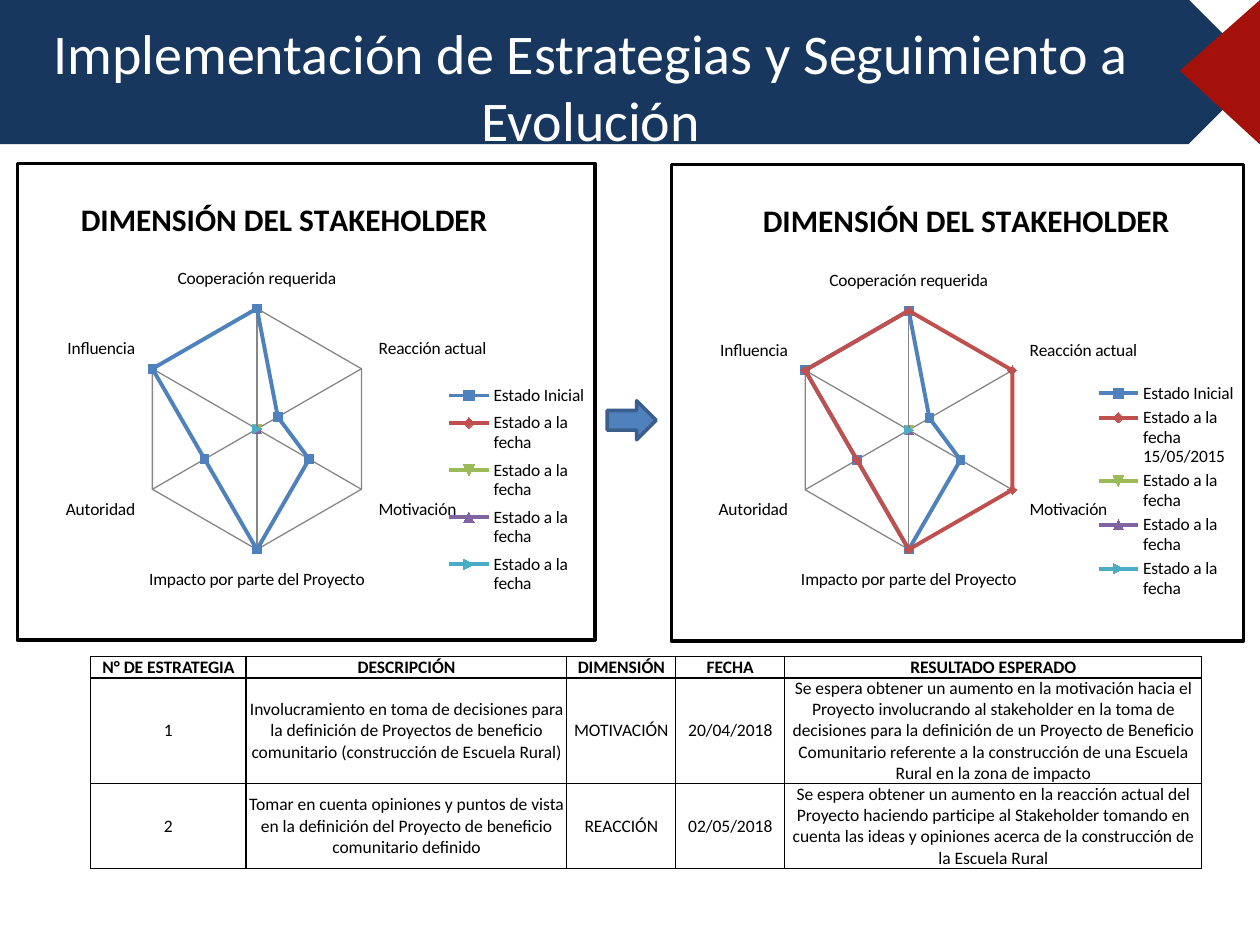
from dataclasses import dataclass

from lxml.etree import SubElement
from pptx import Presentation
from pptx.chart.data import CategoryChartData
from pptx.dml.color import RGBColor
from pptx.enum.chart import XL_CHART_TYPE, XL_LEGEND_POSITION, XL_TICK_LABEL_POSITION, XL_TICK_MARK
from pptx.enum.shapes import MSO_SHAPE
from pptx.enum.text import MSO_ANCHOR, PP_ALIGN
from pptx.oxml import parse_xml
from pptx.oxml.ns import nsdecls, qn
from pptx.util import Pt


@dataclass(frozen=True)
class Theme:
    font: str = "Calibri"
    title: int = 32
    chart_title: int = 18
    body: int = 10
    black: str = "000000"
    white: str = "FFFFFF"
    navy: str = "17375E"
    red: str = "A4100A"
    blue: str = "4F81BD"
    arrow_edge: str = "3A5F8C"
    grid: str = "868686"
    series: tuple = ("4F81BD", "C0504D", "9BBB59", "8064A2", "4BACC6")


def rgb(value):
    return RGBColor.from_string(value)


def set_layout(parent, inner=False, **fractions):
    """Place a chart part by fractions of the chart's size."""
    for old in parent.findall(qn("c:layout")):
        parent.remove(old)
    layout = parse_xml(f"<c:layout {nsdecls('c')}><c:manualLayout/></c:layout>")
    manual = layout[0]
    if inner:
        SubElement(manual, qn("c:layoutTarget")).set("val", "inner")
    for key in "xy":
        SubElement(manual, qn(f"c:{key}Mode")).set("val", "edge")
    for key, value in fractions.items():
        SubElement(manual, qn(f"c:{key}")).set("val", str(value))
    overlay = parent.find(qn("c:overlay"))
    if overlay is None:
        parent.insert(0, layout)
    else:
        overlay.addprevious(layout)


def set_borders(cell, top, bottom, color):
    widths = {"L": 1, "R": 1, "T": top, "B": bottom}
    for i, (side, width) in enumerate(widths.items()):
        cell._tc.get_or_add_tcPr().insert(i, parse_xml(
            f'<a:ln{side} {nsdecls("a")} w="{Pt(width)}"><a:solidFill>'
            f'<a:srgbClr val="{color}"/></a:solidFill></a:ln{side}>'))


class Deck:
    def __init__(self, theme, width, height):
        self.theme = theme
        self.prs = Presentation()
        self.prs.slide_width, self.prs.slide_height = Pt(width), Pt(height)
        self.s = self.prs.slides.add_slide(self.prs.slide_layouts[6])

    def style(self, p, size, color, bold=False):
        p.alignment = PP_ALIGN.CENTER
        f = p.font
        f.name, f.size, f.bold = self.theme.font, Pt(size), bold
        f.color.rgb = rgb(color)

    def shape(self, kind, box, fill, line, width=0.75, rotation=0):
        sp = self.s.shapes.add_shape(kind, *map(Pt, box))
        sp.shadow.inherit = False
        sp.rotation = rotation
        sp.fill.solid()
        sp.fill.fore_color.rgb = rgb(fill)
        sp.line.color.rgb = rgb(line)
        sp.line.width = Pt(width)
        return sp

    def title(self, text, box):
        tf = self.s.shapes.add_textbox(*map(Pt, box)).text_frame
        tf.word_wrap = True
        tf.vertical_anchor = MSO_ANCHOR.MIDDLE
        p = tf.paragraphs[0]
        p.text = text
        self.style(p, self.theme.title, self.theme.white)

    def radar(self, title, categories, series, box, title_x):
        t = self.theme
        data = CategoryChartData()
        data.categories = categories
        for name, values in series:
            data.add_series(name, values)
        chart = self.s.shapes.add_chart(
            XL_CHART_TYPE.RADAR_MARKERS, *map(Pt, box), data).chart
        chart.font.name, chart.font.size = t.font, Pt(t.body)
        chart.font.color.rgb = rgb(t.black)

        chart.has_title = True
        p = chart.chart_title.text_frame.paragraphs[0]
        p.text = title
        self.style(p, t.chart_title, t.black, bold=True)
        chart.has_legend = True
        chart.legend.position = XL_LEGEND_POSITION.RIGHT
        chart.legend.include_in_layout = False

        root = chart._chartSpace
        set_layout(root.find(".//" + qn("c:title")), x=title_x, y=0.06)
        set_layout(root.find(".//" + qn("c:legend")), x=0.74, y=0.45, w=0.25, h=0.47)
        set_layout(root.find(".//" + qn("c:plotArea")), inner=True,
                   x=0.206, y=0.242, w=0.418, h=0.631)
        root.find(qn("c:chart")).addnext(parse_xml(
            f'<c:spPr {nsdecls("c", "a")}><a:solidFill><a:srgbClr val="{t.white}"/></a:solidFill>'
            f'<a:ln w="{Pt(2)}"><a:solidFill><a:srgbClr val="{t.black}"/></a:solidFill></a:ln></c:spPr>'))

        axis = chart.value_axis
        axis.minimum_scale, axis.maximum_scale, axis.major_unit = 0, 100, 100
        axis.tick_label_position = XL_TICK_LABEL_POSITION.NONE
        axis.major_tick_mark = axis.minor_tick_mark = XL_TICK_MARK.NONE
        for ax in (axis, chart.category_axis):
            ax.has_major_gridlines = True
            for line in (ax.format.line, ax.major_gridlines.format.line):
                line.color.rgb = rgb(t.grid)
                line.width = Pt(0.75)

        for ser, color in zip(chart.plots[0].series, t.series):
            ser.smooth = False
            ser.format.line.color.rgb = rgb(color)
            ser.format.line.width = Pt(2.25)
            ser.marker.format.fill.solid()
            ser.marker.format.fill.fore_color.rgb = rgb(color)
            ser.marker.format.line.color.rgb = rgb(color)

    def table(self, rows, left, top, widths, heights):
        t = self.theme
        table = self.s.shapes.add_table(
            len(rows), len(widths), Pt(left), Pt(top), Pt(sum(widths)), Pt(sum(heights))).table
        table.first_row = table.horz_banding = False
        for column, width in zip(table.columns, widths):
            column.width = Pt(width)
        for i, (row, texts) in enumerate(zip(table.rows, rows)):
            row.height = Pt(heights[i])
            header = i == 0
            for cell, text in zip(row.cells, texts):
                cell.fill.background()
                cell.margin_left = cell.margin_right = cell.margin_top = cell.margin_bottom = 0
                cell.vertical_anchor = MSO_ANCHOR.BOTTOM if header else MSO_ANCHOR.MIDDLE
                p = cell.text_frame.paragraphs[0]
                p.text = text
                self.style(p, t.body, t.black, bold=header)
                set_borders(cell, 1 if i < 2 else 0.5, 1 if header else 0.5, t.black)


CATEGORIES = ["Cooperación requerida", "Reacción actual", "Motivación",
              "Impacto por parte del Proyecto", "Autoridad", "Influencia"]
INITIAL = ("Estado Inicial", [100, 20, 50, 100, 50, 100])
PENDING = ("Estado a la fecha", [0] * 6)
UPDATED = ("Estado a la fecha 15/05/2015", [100, 100, 100, 100, 50, 100])
STRATEGIES = [
    ["N° DE ESTRATEGIA", "DESCRIPCIÓN", "DIMENSIÓN", "FECHA", "RESULTADO ESPERADO"],
    ["1",
     "Involucramiento en toma de decisiones para la definición de Proyectos de beneficio "
     "comunitario (construcción de Escuela Rural)",
     "MOTIVACIÓN", "20/04/2018",
     "Se espera obtener un aumento en la motivación hacia el Proyecto involucrando al "
     "stakeholder en la toma de decisiones para la definición de un Proyecto de Beneficio "
     "Comunitario referente a la construcción de una Escuela Rural en la zona de impacto"],
    ["2",
     "Tomar en cuenta opiniones y puntos de vista en la definición del Proyecto de beneficio "
     "comunitario definido",
     "REACCIÓN", "02/05/2018",
     "Se espera obtener un aumento en la reacción actual del Proyecto haciendo participe al "
     "Stakeholder tomando en cuenta las ideas y opiniones acerca de la construcción de la "
     "Escuela Rural"],
]


def main():
    t = Theme()
    deck = Deck(t, 720, 540)
    deck.shape(MSO_SHAPE.PENTAGON, (0, 0, 720, 82), t.navy, t.navy)
    corner = deck.shape(MSO_SHAPE.ISOSCELES_TRIANGLE, (656.5, 18.5, 82, 45.5),
                        t.red, t.red, rotation=270)
    corner.adjustments[0] = 0.51
    deck.title("Implementación de Estrategias y Seguimiento a Evolución", (0, 3.5, 675.5, 91))

    heading = "DIMENSIÓN DEL STAKEHOLDER"
    deck.radar(heading, CATEGORIES, [INITIAL] + [PENDING] * 4, (8.9, 92.4, 332, 274.3), 0.1)
    deck.radar(heading, CATEGORIES, [INITIAL, UPDATED] + [PENDING] * 3,
               (382.6, 93, 329, 274.3), 0.15)
    deck.shape(MSO_SHAPE.RIGHT_ARROW, (347, 229, 28, 22.3), t.blue, t.arrow_edge, width=2)

    deck.table(STRATEGIES, 51.8, 375.2, [88.9, 183.2, 62.3, 62.3, 238.3], [12.2, 60.5, 48.5])
    deck.prs.save("out.pptx")


if __name__ == "__main__":
    main()
